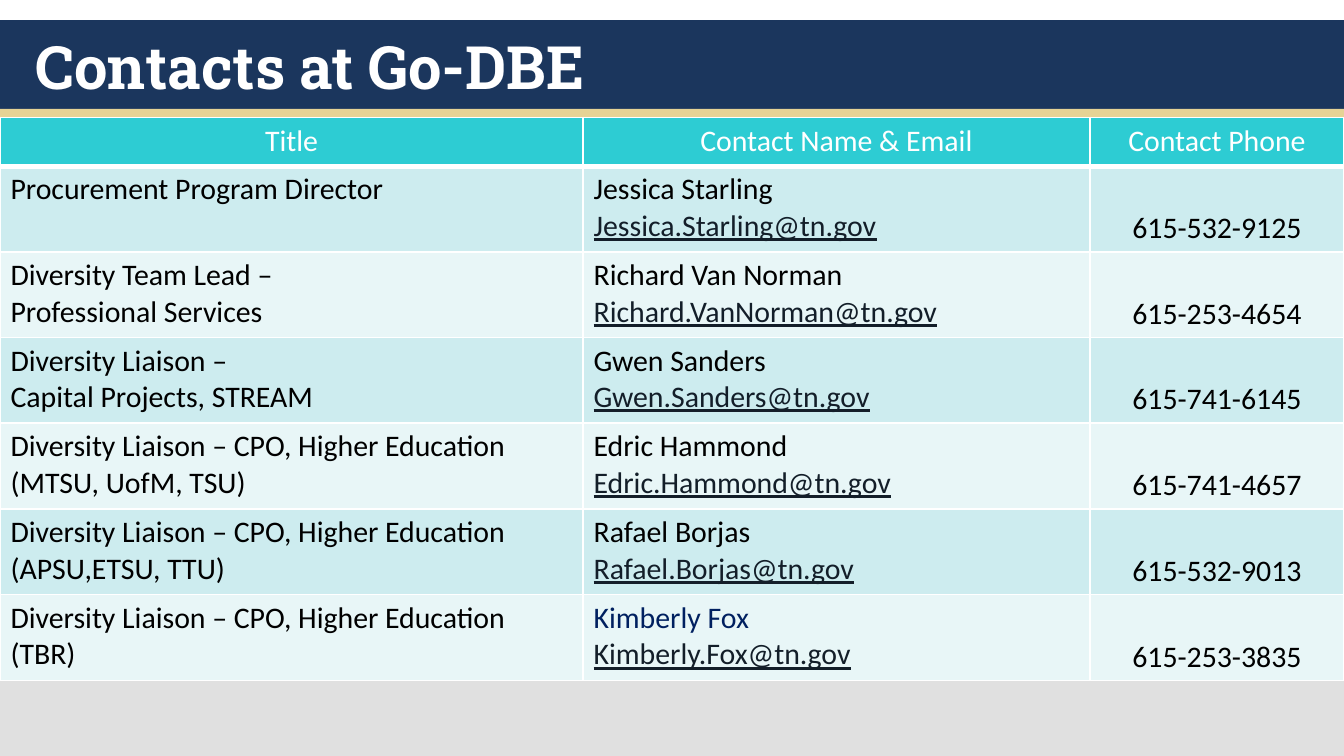
from lxml.etree import SubElement
from pptx import Presentation
from pptx.dml.color import RGBColor
from pptx.enum.shapes import MSO_SHAPE
from pptx.enum.text import MSO_ANCHOR, PP_ALIGN
from pptx.oxml.ns import qn
from pptx.util import Cm, Pt

WIDTH, HEIGHT = 25.4, 14.29
WHITE, BLACK, NAVY, LINK = "FFFFFF", "000000", "002060", "131E29"
HEADER_FILL = "2DCCD3"
ROW_FILLS = ["CDECEF", "E8F6F7"]

heading = "Contacts at Go-DBE"
bands = [
    (0.38, 1.7, "1B365D"),
    (2.06, 0.18, "E6D395"),
    (12.83, 1.46, "E0E0E0"),
]
headers = ["Title", "Contact Name & Email", "Contact Phone"]
column_widths = [11.02, 9.58, 4.8]
header_height, row_height, table_top = 0.92, 1.62, 2.22
contacts = [
    (["Procurement Program Director"],
     "Jessica Starling", BLACK, "Jessica.Starling@tn.gov", "615-532-9125"),
    (["Diversity Team Lead –", "Professional Services"],
     "Richard Van Norman", BLACK, "Richard.VanNorman@tn.gov", "615-253-4654"),
    (["Diversity Liaison –", "Capital Projects, STREAM"],
     "Gwen Sanders", BLACK, "Gwen.Sanders@tn.gov", "615-741-6145"),
    (["Diversity Liaison – CPO, Higher Education (MTSU, UofM, TSU)"],
     "Edric Hammond", BLACK, "Edric.Hammond@tn.gov", "615-741-4657"),
    (["Diversity Liaison – CPO, Higher Education (APSU,ETSU, TTU)"],
     "Rafael Borjas", BLACK, "Rafael.Borjas@tn.gov", "615-532-9013"),
    (["Diversity Liaison – CPO, Higher Education (TBR)"],
     "Kimberly Fox", NAVY, "Kimberly.Fox@tn.gov", "615-253-3835"),
]


def paint(target, color):
    target.solid()
    target.fore_color.rgb = RGBColor.from_string(color)


def write(paragraph, text, color, size=16, font="Calibri", bold=False, underline=False):
    run = paragraph.add_run()
    run.text = text
    run.font.name = font
    run.font.size = Pt(size)
    run.font.bold = bold
    run.font.underline = underline
    run.font.color.rgb = RGBColor.from_string(color)


def style_cell(cell, fill, bottom=1):
    cell.margin_left = cell.margin_right = Cm(0.2)
    cell.margin_top = cell.margin_bottom = Cm(0.1)
    properties = cell._tc.get_or_add_tcPr()
    for side, points in (("L", 1), ("R", 1), ("T", 1), ("B", bottom)):
        border = SubElement(properties, qn(f"a:ln{side}"), w=str(Pt(points)))
        color = SubElement(SubElement(border, qn("a:solidFill")), qn("a:srgbClr"))
        color.set("val", WHITE)
    paint(cell.fill, fill)


def fill_cell(cell, lines, align=PP_ALIGN.LEFT):
    frame = cell.text_frame
    for index, (text, color, underline) in enumerate(lines):
        paragraph = frame.add_paragraph() if index else frame.paragraphs[0]
        paragraph.alignment = align
        write(paragraph, text, color, underline=underline)


deck = Presentation()
deck.slide_width, deck.slide_height = Cm(WIDTH), Cm(HEIGHT)
slide = deck.slides.add_slide(deck.slide_layouts[6])

for top, height, color in bands:
    band = slide.shapes.add_shape(MSO_SHAPE.RECTANGLE, 0, Cm(top), Cm(WIDTH), Cm(height))
    band.shadow.inherit = False
    band.line.fill.background()
    paint(band.fill, color)

title = slide.shapes.add_textbox(Cm(0.42), Cm(0.38), Cm(24.56), Cm(1.72)).text_frame
title.word_wrap = True
title.vertical_anchor = MSO_ANCHOR.MIDDLE
write(title.paragraphs[0], heading, WHITE, 32, "Roboto Slab", bold=True)

table = slide.shapes.add_table(
    len(contacts) + 1, len(headers), 0, Cm(table_top), Cm(WIDTH),
    Cm(header_height + row_height * len(contacts)),
).table
for column, width in zip(table.columns, column_widths):
    column.width = Cm(width)
for index, row in enumerate(table.rows):
    row.height = Cm(row_height if index else header_height)

for column, label in enumerate(headers):
    cell = table.cell(0, column)
    style_cell(cell, HEADER_FILL, bottom=3)
    fill_cell(cell, [(label, WHITE, False)], PP_ALIGN.CENTER)

for index, (role, name, name_color, email, phone) in enumerate(contacts):
    role_cell, name_cell, phone_cell = table.rows[index + 1].cells
    for cell in (role_cell, name_cell, phone_cell):
        style_cell(cell, ROW_FILLS[index % 2])
    fill_cell(role_cell, [(line, BLACK, False) for line in role])
    fill_cell(name_cell, [(name, name_color, False), (email, LINK, True)])
    fill_cell(phone_cell, [(phone, BLACK, False)], PP_ALIGN.CENTER)
    phone_cell.vertical_anchor = MSO_ANCHOR.BOTTOM

deck.save("out.pptx")
